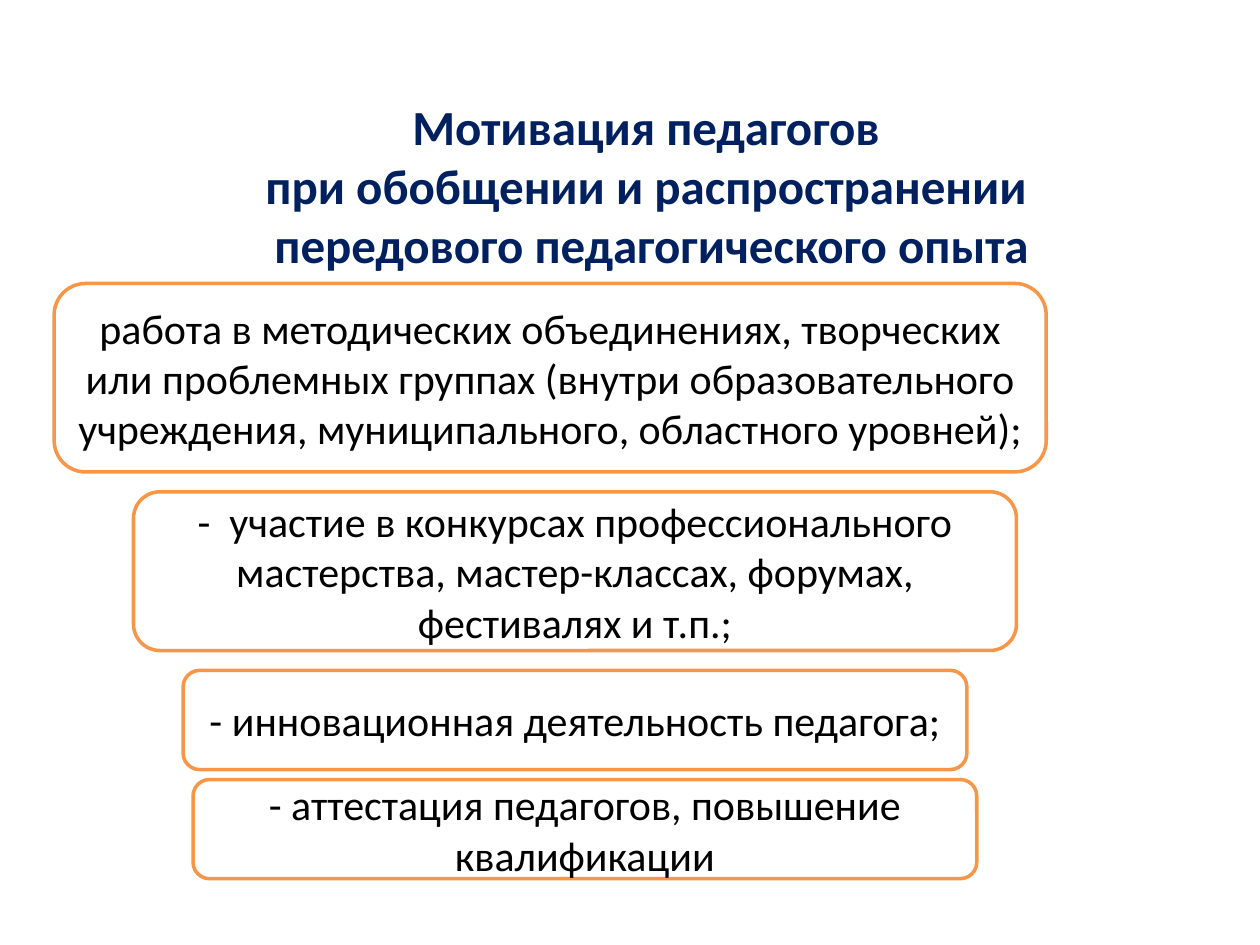
from dataclasses import dataclass

from pptx import Presentation
from pptx import util as u
from pptx.dml.color import RGBColor
from pptx.enum import shapes, text

NAVY = RGBColor(0x00, 0x20, 0x60)
ORANGE = RGBColor(0xF7, 0x96, 0x46)
WHITE = RGBColor(0xFF, 0xFF, 0xFF)
BLACK = RGBColor(0x00, 0x00, 0x00)
FONT = "Calibri"

# Grid of 2 mm cells that starts at the first card's corner
CELL = u.Cm(0.2)
GRID_LEFT = u.Inches(0.43)
GRID_TOP = u.Inches(2.25)


@dataclass
class Card:
    wording: str
    column: int
    row: int
    columns: int
    rows: int


CARDS = [
    Card("работа в методических объединениях, творческих или проблемных группах "
         "(внутри образовательного учреждения, муниципального, областного уровней);",
         0, 0, 100, 19),
    Card("-  участие в конкурсах профессионального мастерства, мастер-классах, "
         "форумах, фестивалях и т.п.;", 8, 21, 89, 16),
    Card("- инновационная деятельность педагога;", 13, 39, 79, 10),
    Card("- аттестация педагогов, повышение квалификации", 14, 50, 79, 10),
]


def write(frame, wording: str, size: int, color: RGBColor, bold: bool) -> None:
    frame.text = wording
    frame.word_wrap = True
    frame.auto_size = text.MSO_AUTO_SIZE.NONE
    frame.vertical_anchor = text.MSO_ANCHOR.MIDDLE
    paragraph = frame.paragraphs[0]
    paragraph.alignment = text.PP_ALIGN.CENTER
    for run in paragraph.runs:
        run.font.name = FONT
        run.font.size = u.Pt(size)
        run.font.bold = bold
        run.font.color.rgb = color


def draw_card(slide, card: Card) -> None:
    box = slide.shapes.add_shape(
        shapes.MSO_SHAPE.ROUNDED_RECTANGLE,
        GRID_LEFT + card.column * CELL, GRID_TOP + card.row * CELL,
        card.columns * CELL, card.rows * CELL)
    box.shadow.inherit = False
    box.fill.solid()
    box.fill.fore_color.rgb = WHITE
    box.line.color.rgb = ORANGE
    box.line.width = u.Pt(2)
    write(box.text_frame, card.wording, 24, BLACK, False)


def main() -> None:
    deck = Presentation()
    deck.slide_width, deck.slide_height = u.Inches(10), u.Inches(7.5)
    slide = deck.slides.add_slide(deck.slide_layouts[5])

    # Heading
    heading = slide.shapes.title
    heading.left, heading.top = u.Inches(0.67), u.Inches(0.84)
    heading.width, heading.height = u.Inches(9), u.Inches(1.25)
    write(heading.text_frame,
          "Мотивация педагогов \vпри обобщении и распространении "
          "\vпередового педагогического опыта", 28, NAVY, True)

    # Cards with the forms of motivation
    for card in CARDS:
        draw_card(slide, card)

    deck.save("out.pptx")


if __name__ == "__main__":
    main()
